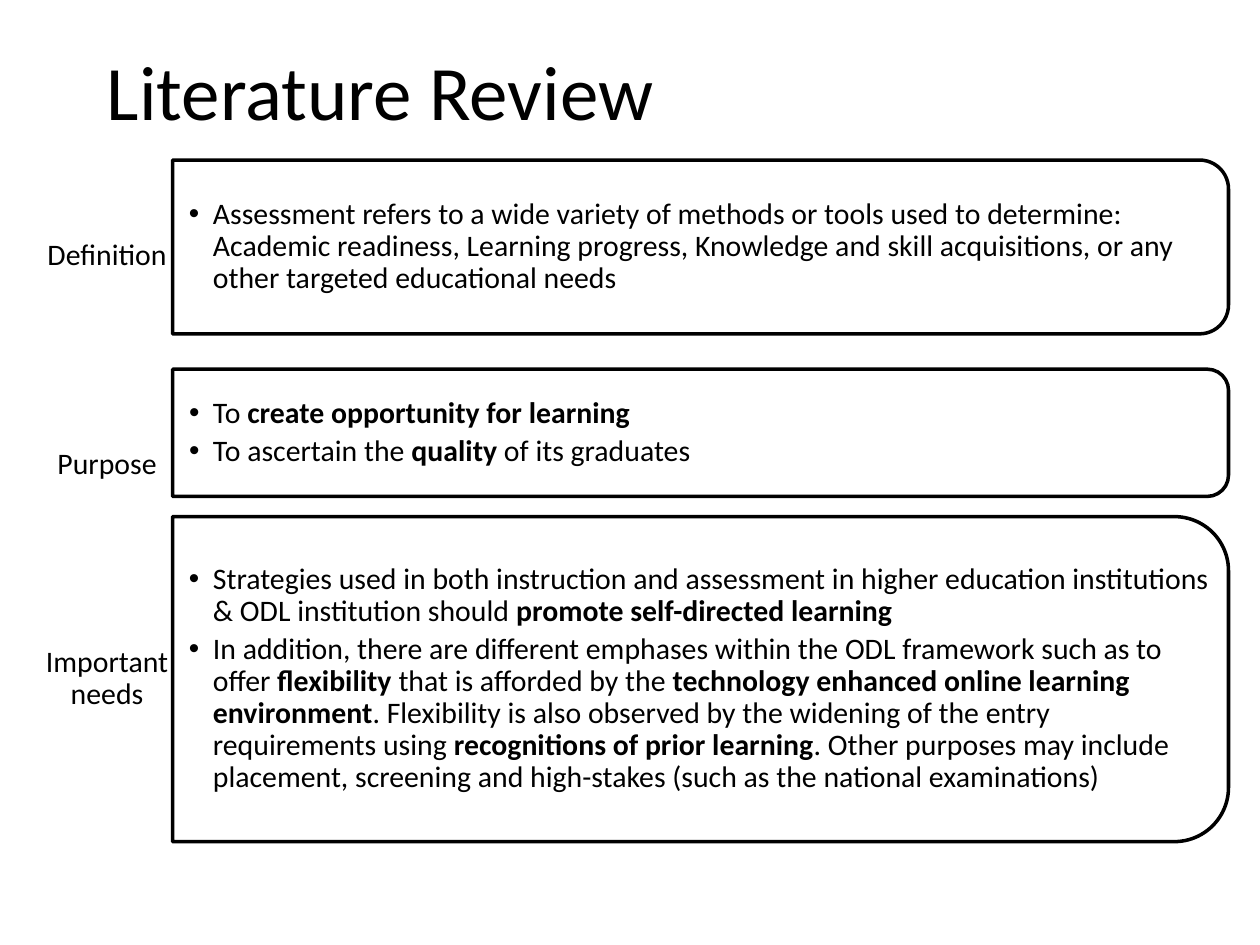
from lxml.etree import SubElement
from pptx import Presentation
from pptx.dml.color import RGBColor
from pptx.enum.shapes import MSO_SHAPE
from pptx.enum.text import MSO_ANCHOR, PP_ALIGN
from pptx.oxml.ns import qn
from pptx.util import Inches, Pt

COLORS = {"text": "000000", "line": "000000", "panel": "FFFFFF"}
FONT = "Calibri"
PANEL_LEFT, PANEL_WIDTH = 1.37, 8.38
LABEL_LEFT, LABEL_WIDTH, LABEL_HEIGHT = 0.33, 1.04, 0.44

# label, label top, panel top, panel height, bullets as (text, bold) runs
SECTIONS = [
    ("Definition", 1.81, 1.27, 1.38, [
        [("Assessment refers to a wide variety of methods or tools used to determine: "
          "Academic readiness, Learning progress, Knowledge and skill acquisitions, "
          "or any other targeted educational needs", False)],
    ]),
    ("Purpose", 3.47, 2.93, 1.01, [
        [("To ", False), ("create opportunity for learning", True)],
        [("To ascertain the ", False), ("quality", True), (" of its graduates", False)],
    ]),
    ("Important needs", 5.17, 4.1, 2.58, [
        [("Strategies used in both instruction and assessment in higher education "
          "institutions & ODL institution should ", False),
         ("promote self-directed learning", True)],
        [("In addition, there are different emphases within the ODL framework "
          "such as to offer ", False),
         ("flexibility ", True),
         ("that is afforded by the", False),
         (" technology enhanced online learning environment", True),
         (". Flexibility is also observed by the widening of the entry "
          "requirements using ", False),
         ("recognitions of prior learning", True),
         (". Other purposes may include placement, screening and high-stakes "
          "(such as the national examinations)", False)],
    ]),
]


def add_text_frame(left, top, width, height, margins):
    """Add a wrapped, vertically centred text box; margins are left and the rest."""
    tf = s.shapes.add_textbox(Inches(left), Inches(top), Inches(width), Inches(height)).text_frame
    tf.word_wrap = True
    tf.vertical_anchor = MSO_ANCHOR.MIDDLE
    tf.margin_left = Inches(margins[0])
    tf.margin_top = tf.margin_right = tf.margin_bottom = Inches(margins[1])
    return tf


def add_run(p, text, size=17, bold=False):
    r = p.add_run()
    r.text = text
    r.font.name = FONT
    r.font.size = Pt(size)
    r.font.bold = bold
    r.font.color.rgb = RGBColor.from_string(COLORS["text"])


prs = Presentation()
prs.slide_width, prs.slide_height = Inches(10), Inches(7.5)
s = prs.slides.add_slide(prs.slide_layouts[6])

tf = add_text_frame(0.75, 0.17, 4.83, 1.08, (0.1, 0.05))
add_run(tf.paragraphs[0], "Literature Review", size=44)

for label, label_top, top, height, bullets in SECTIONS:
    tf = add_text_frame(LABEL_LEFT, label_top, LABEL_WIDTH, LABEL_HEIGHT, (0.01, 0.01))
    p = tf.paragraphs[0]
    p.alignment = PP_ALIGN.CENTER
    p.line_spacing = 0.9
    p.space_after = Pt(7)
    add_run(p, label)

    # A quarter turn puts the two rounded corners on the right
    sp = s.shapes.add_shape(
        MSO_SHAPE.ROUND_2_SAME_RECTANGLE,
        Inches(PANEL_LEFT + (PANEL_WIDTH - height) / 2),
        Inches(top + (height - PANEL_WIDTH) / 2),
        Inches(height), Inches(PANEL_WIDTH))
    sp.rotation = 90
    sp.shadow.inherit = False
    sp.fill.solid()
    sp.fill.fore_color.rgb = RGBColor.from_string(COLORS["panel"])
    color = sp.fill._xPr.find(qn("a:solidFill"))[0]
    SubElement(color, qn("a:alpha"), val="90000")
    sp.line.color.rgb = RGBColor.from_string(COLORS["line"])
    sp.line.width = Pt(2)

    # The text keeps clear of the rounded corners
    inset = 0.05 * height
    tf = add_text_frame(PANEL_LEFT, top + inset, PANEL_WIDTH - inset,
                        height - 2 * inset, (0.13, 0.01))
    for i, runs in enumerate(bullets):
        p = tf.add_paragraph() if i else tf.paragraphs[0]
        p.line_spacing = 0.9
        p.space_after = Pt(3)
        pPr = p._p.get_or_add_pPr()
        pPr.set("marL", str(Inches(0.19)))
        pPr.set("indent", str(Inches(-0.19)))
        SubElement(pPr, qn("a:buFont"), typeface="Arial")
        SubElement(pPr, qn("a:buChar"), char="•")
        for text, bold in runs:
            add_run(p, text, bold=bold)

prs.save("out.pptx")
